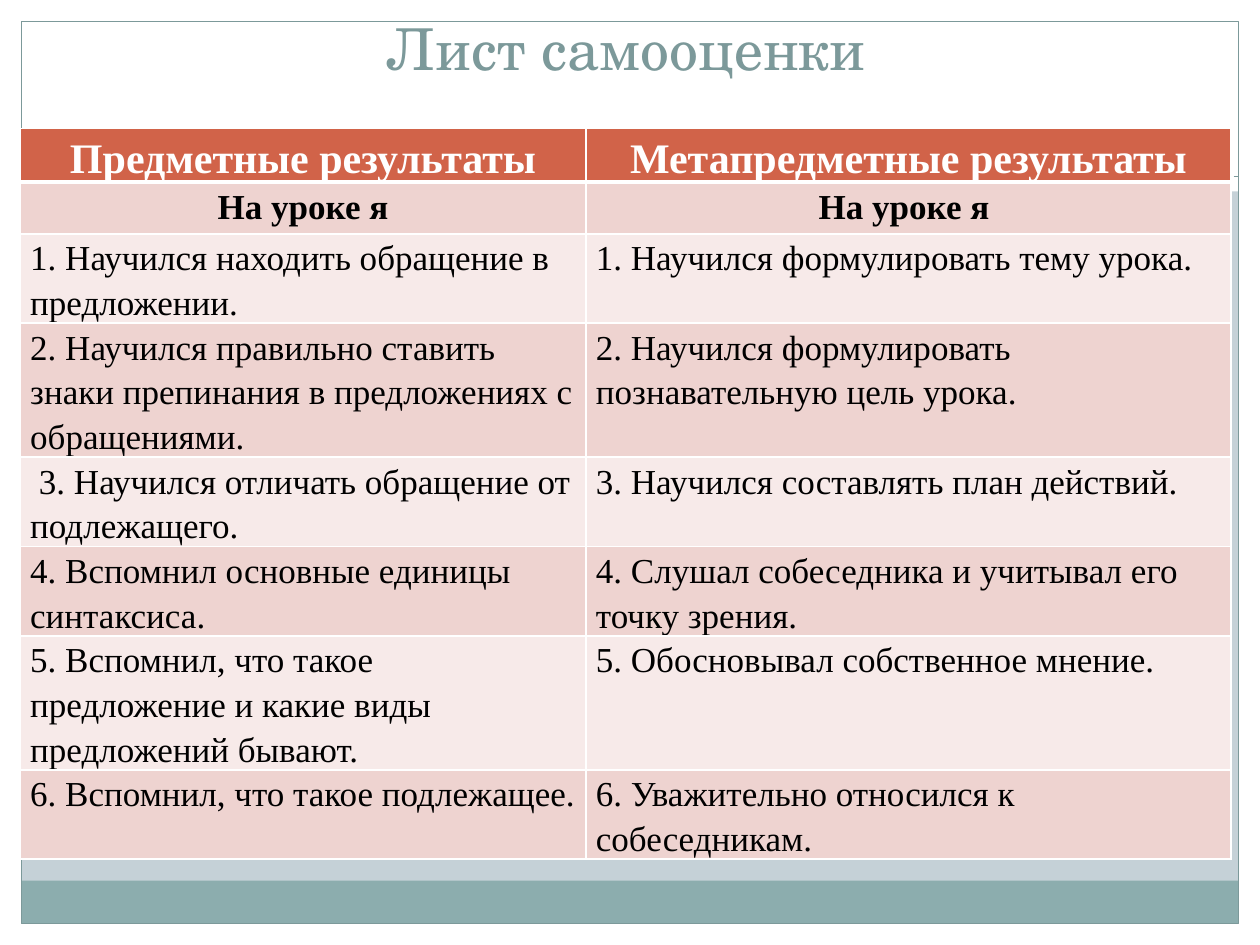
from lxml.etree import SubElement
from pptx import Presentation
from pptx.dml.color import RGBColor
from pptx.enum.dml import MSO_LINE
from pptx.enum.shapes import MSO_CONNECTOR, MSO_SHAPE
from pptx.enum.text import MSO_ANCHOR, PP_ALIGN
from pptx.oxml.ns import qn
from pptx.util import Inches, Pt

COLORS = {
    "background": "C5D1D7", "white": "FFFFFF", "band": "8CADAE",
    "frame": "7C999A", "header": "D16349", "dark_row": "EED3D0",
    "light_row": "F7EAE9", "text": "000000",
}
TITLE_FONT = "TeX Gyre Schola"
TABLE_FONT = "Times New Roman"

ROWS = [
    ("Предметные результаты", "Метапредметные результаты"),
    ("На уроке я", "На уроке я "),
    ("1. Научился находить обращение в предложении.",
     "1. Научился формулировать тему урока."),
    ("2. Научился правильно ставить знаки препинания в предложениях с обращениями.",
     "2. Научился формулировать познавательную цель урока."),
    (" 3. Научился отличать обращение от подлежащего.",
     "3. Научился составлять план действий."),
    ("4. Вспомнил основные единицы синтаксиса.",
     "4. Слушал собеседника и учитывал его точку зрения."),
    ("5. Вспомнил, что такое предложение и какие виды предложений бывают.",
     "5. Обосновывал собственное мнение."),
    ("6. Вспомнил, что такое подлежащее.",
     "6. Уважительно относился к собеседникам."),
]


def color(name):
    return RGBColor.from_string(COLORS[name])


def add_rectangle(page, box, fill=None, line=None):
    shape = page.shapes.add_shape(MSO_SHAPE.RECTANGLE, *map(Inches, box))
    shape.shadow.inherit = False
    if fill:
        shape.fill.solid()
        shape.fill.fore_color.rgb = color(fill)
    else:
        shape.fill.background()
    if line:
        shape.line.color.rgb = color(line)
        shape.line.width = Pt(0.75)
    else:
        shape.line.fill.background()


def add_backdrop(page, box):
    left, top, width, height = box
    right, bottom = left + width, top + height
    margin = 0.17
    page.background.fill.solid()
    page.background.fill.fore_color.rgb = color("background")

    # White margins, with a tall one behind the title
    for strip in [
        (left, bottom - margin, width, margin),
        (left, top, width, 1.52),
        (left, top, margin, height),
        (right - margin, top, margin, height),
    ]:
        add_rectangle(page, strip, fill="white")

    # Footer band and frame
    inner_width = width - 2 * margin
    add_rectangle(page, (left + margin, bottom - margin - 0.34, inner_width, 0.34),
                  fill="band")
    add_rectangle(page, (left + margin, top + margin, inner_width, height - 2 * margin),
                  line="frame")

    # Dashed divider
    divider = page.shapes.add_connector(
        MSO_CONNECTOR.STRAIGHT, Inches(left + margin), Inches(top + 1.4),
        Inches(right - margin), Inches(top + 1.4))
    divider.line.color.rgb = color("frame")
    divider.line.width = Pt(0.75)
    divider.line.dash_style = MSO_LINE.SQUARE_DOT
    SubElement(divider._element.spPr, qn("a:effectLst"))


def format_text(para, font, size, font_color, bold=False):
    for span in para.runs:
        span.font.name = font
        span.font.size = Pt(size)
        span.font.bold = bold
        span.font.color.rgb = color(font_color)


def add_title(page, box):
    frame = page.shapes.add_textbox(*map(Inches, box)).text_frame
    frame.word_wrap = True
    frame.vertical_anchor = MSO_ANCHOR.BOTTOM
    frame.text = "Лист самооценки"
    para = frame.paragraphs[0]
    para.alignment = PP_ALIGN.CENTER
    format_text(para, TITLE_FONT, 33, "frame")


def add_borders(cell, widths):
    properties = cell._tc.get_or_add_tcPr()
    for side, width in widths.items():
        border = SubElement(properties, qn(f"a:ln{side}"), w=str(Pt(width)))
        fill = SubElement(border, qn("a:solidFill"))
        SubElement(fill, qn("a:srgbClr"), val=COLORS["white"])


def format_cell(cell, text, row):
    # Borders come before the fill; a thick rule closes the header
    add_borders(cell, {"L": 1, "R": 1, "T": 3 if row == 1 else 1,
                       "B": 3 if row == 0 else 1})
    cell.fill.solid()
    stripe = "dark_row" if row % 2 else "light_row"
    cell.fill.fore_color.rgb = color("header" if row == 0 else stripe)
    cell.margin_left = cell.margin_right = Inches(0.08)
    cell.margin_top = cell.margin_bottom = 0

    size = 24 if row == 0 else 20
    cell.text_frame.text = text
    para = cell.text_frame.paragraphs[0]
    # Fixed line height keeps the rows exactly as tall as their lines
    para.line_spacing = Pt(size * 1.275)
    para.alignment = PP_ALIGN.CENTER if row < 2 else PP_ALIGN.LEFT
    format_text(para, TABLE_FONT, size, "white" if row == 0 else "text",
                bold=row < 2)


def add_results_table(page, box):
    row_height = 0.41
    left, top, width = box
    table = page.shapes.add_table(
        len(ROWS), 2, Inches(left), Inches(top), Inches(width),
        Inches(row_height * len(ROWS))).table
    first_width = 4.49
    table.columns[0].width = Inches(first_width)
    table.columns[1].width = Inches(width - first_width)
    for row, texts in enumerate(ROWS):
        table.rows[row].height = Inches(row_height)
        for column, text in enumerate(texts):
            format_cell(table.cell(row, column), text, row)


def main():
    deck = Presentation()
    deck.slide_width = Inches(10)
    deck.slide_height = Inches(7.5)
    page = deck.slides.add_slide(deck.slide_layouts[6])
    add_backdrop(page, (0, 0, 10, 7.5))
    add_title(page, (0.31, 0, 9.33, 0.7))
    add_results_table(page, (0.16, 1.02, 9.61))
    deck.save("out.pptx")


if __name__ == "__main__":
    main()
